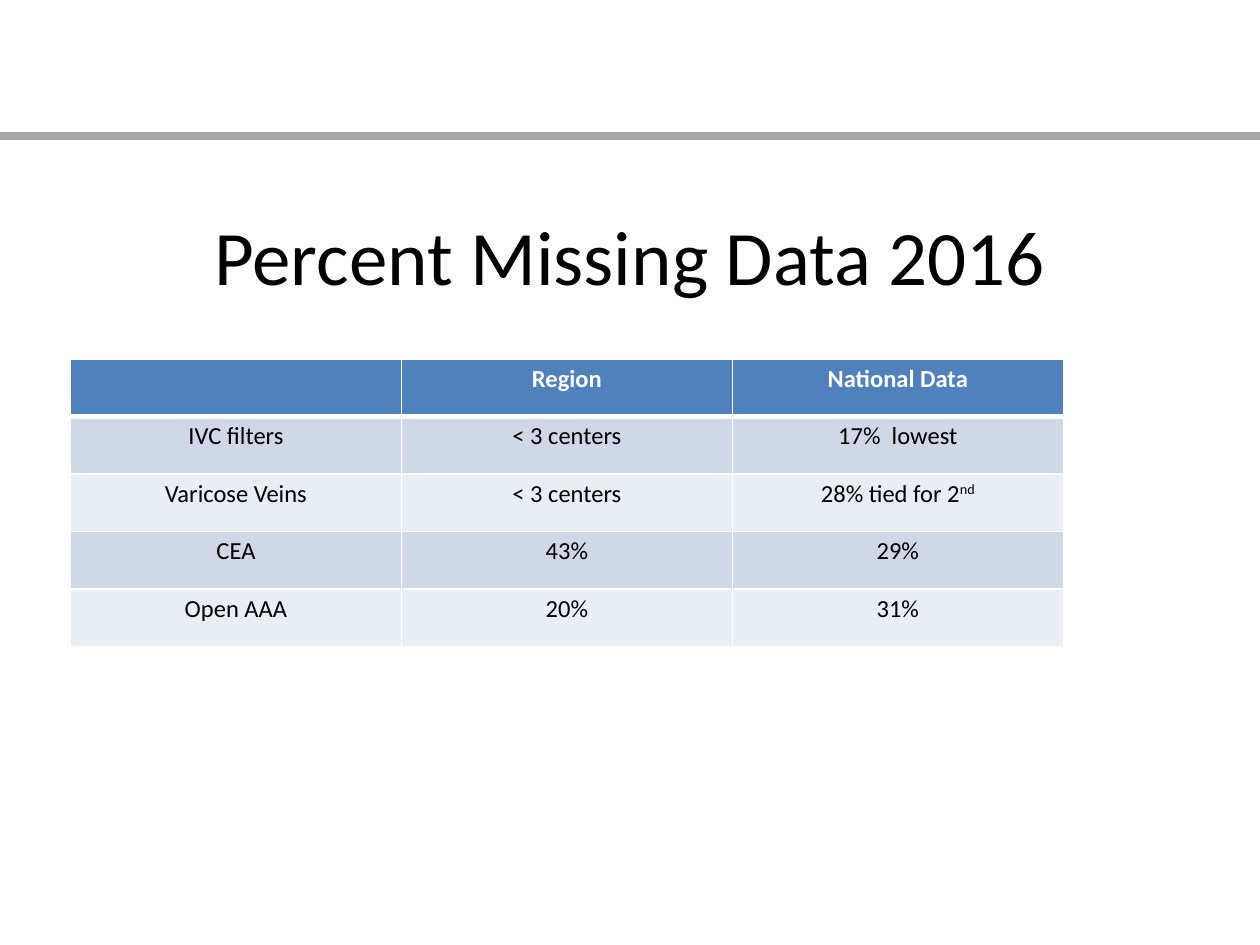
from lxml import etree
from pptx import Presentation
from pptx.dml.color import RGBColor
from pptx.enum.shapes import MSO_CONNECTOR
from pptx.enum.text import MSO_ANCHOR, PP_ALIGN
from pptx.oxml.ns import qn
from pptx.util import Inches, Pt

STRAIGHT = MSO_CONNECTOR.STRAIGHT
CENTER = PP_ALIGN.CENTER
MIDDLE = MSO_ANCHOR.MIDDLE

TITLE = "Percent Missing Data 2016"
ROWS = [
    ["", "Region", "National Data"],
    ["IVC filters", "< 3 centers", "17%  lowest"],
    ["Varicose Veins", "< 3 centers", ("28% tied for 2", "nd")],
    ["CEA", "43%", "29%"],
    ["Open AAA", "20%", "31%"],
]

THEME = {
    "font": "Calibri",
    "title_size": 44,
    "table_size": 14,
    "text": "000000",
    "header_text": "FFFFFF",
    "header_fill": "4F81BD",
    "band_fills": ["D0D8E8", "E9EDF4"],
    "border": "FFFFFF",
    "rule": "A6A6A6",
}
TABLE_WIDTH = 7.88
TABLE_HEIGHT = 2.28


def write_text(text_frame, text, size, color, bold=False, superscript=""):
    paragraph = text_frame.paragraphs[0]
    paragraph.alignment = CENTER
    for part, baseline in ((text, 0), (superscript, 30000)):
        if not part:
            continue
        run = paragraph.add_run()
        run.text = part
        run.font.name = THEME["font"]
        run.font.size = Pt(size)
        run.font.bold = bold
        run.font.color.rgb = RGBColor.from_string(color)
        if baseline:
            run.font._element.set("baseline", str(baseline))


def set_borders(cell, top, bottom):
    properties = cell._tc.get_or_add_tcPr()
    widths = {"a:lnL": 1, "a:lnR": 1, "a:lnT": top, "a:lnB": bottom}
    for position, (tag, width) in enumerate(widths.items()):
        line = etree.Element(qn(tag), w=str(Pt(width)))
        fill = etree.SubElement(line, qn("a:solidFill"))
        etree.SubElement(fill, qn("a:srgbClr"), val=THEME["border"])
        properties.insert(position, line)


def add_rule(slide):
    rule = slide.shapes.add_connector(
        STRAIGHT, Inches(0), Inches(1.08), Inches(10), Inches(1.08)
    )
    rule.line.color.rgb = RGBColor.from_string(THEME["rule"])
    rule.line.width = Pt(5)
    etree.SubElement(rule._element.spPr, qn("a:effectLst"))


def add_title(slide):
    title = slide.shapes.add_textbox(Inches(0.5), Inches(1.4), Inches(9), Inches(1.25))
    title.text_frame.word_wrap = True
    title.text_frame.vertical_anchor = MIDDLE
    write_text(title.text_frame, TITLE, size=THEME["title_size"], color=THEME["text"])


def add_data_table(slide):
    table = slide.shapes.add_table(
        len(ROWS), len(ROWS[0]), Inches(0.56), Inches(2.85),
        Inches(TABLE_WIDTH), Inches(TABLE_HEIGHT),
    ).table
    for column in table.columns:
        column.width = Inches(TABLE_WIDTH / len(ROWS[0]))
    for row_index, values in enumerate(ROWS):
        table.rows[row_index].height = Inches(TABLE_HEIGHT / len(ROWS))
        header = row_index == 0
        band = THEME["band_fills"][(row_index - 1) % 2]
        for column_index, value in enumerate(values):
            cell = table.cell(row_index, column_index)
            cell.margin_left = cell.margin_right = Inches(0.07)
            cell.margin_top = cell.margin_bottom = Inches(0.04)
            cell.fill.solid()
            cell.fill.fore_color.rgb = RGBColor.from_string(
                THEME["header_fill"] if header else band
            )
            set_borders(cell, top=3 if row_index == 1 else 1, bottom=3 if header else 1)
            text, superscript = value if isinstance(value, tuple) else (value, "")
            write_text(
                cell.text_frame, text, size=THEME["table_size"],
                color=THEME["header_text"] if header else THEME["text"],
                bold=header, superscript=superscript,
            )


def main():
    presentation = Presentation()
    presentation.slide_width = Inches(10)
    presentation.slide_height = Inches(7.5)
    slide = presentation.slides.add_slide(presentation.slide_layouts[6])
    add_rule(slide)
    add_title(slide)
    add_data_table(slide)
    presentation.save("out.pptx")


if __name__ == "__main__":
    main()
